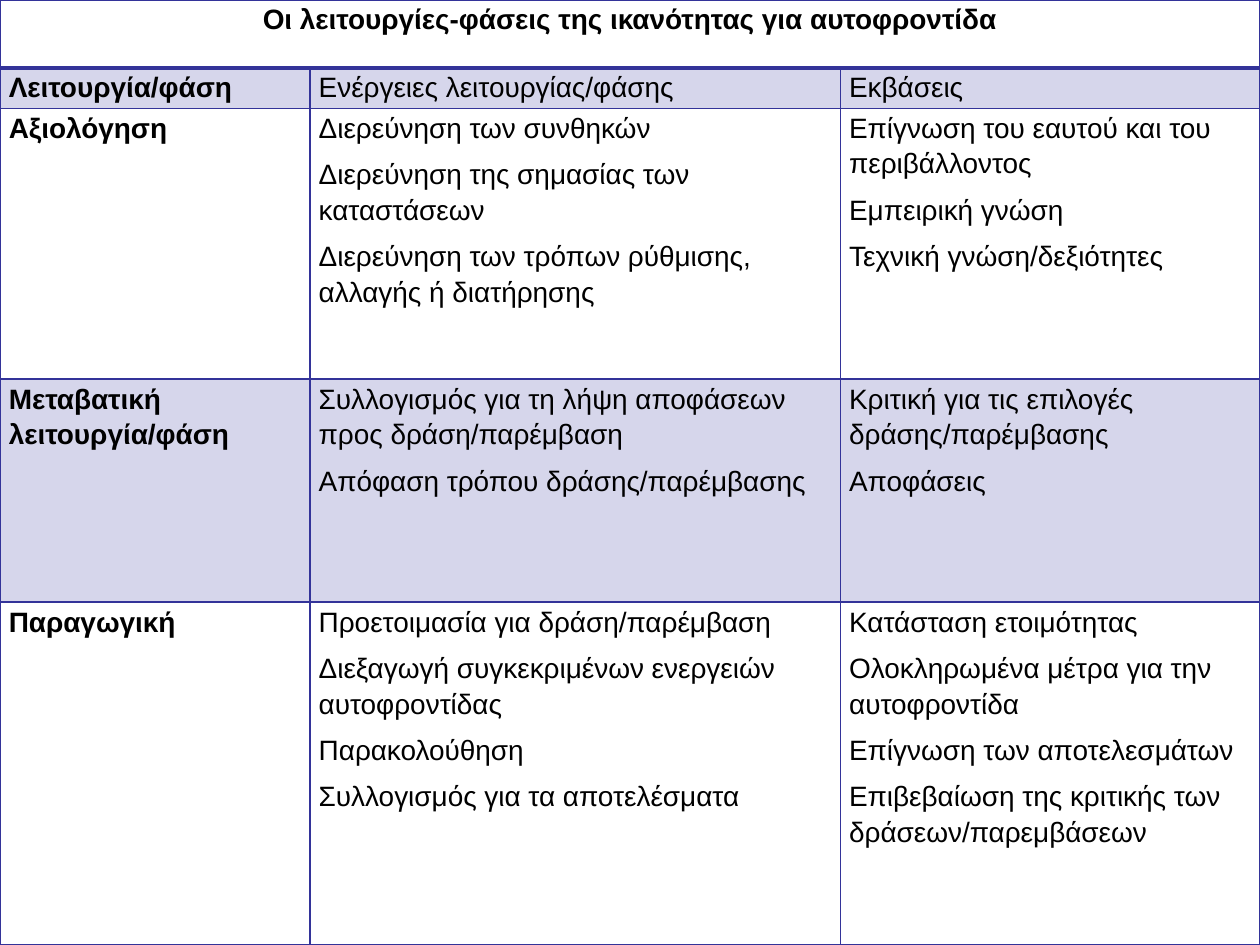
from dataclasses import dataclass

from lxml.etree import SubElement
from pptx import Presentation
from pptx.dml.color import RGBColor
from pptx.enum.text import PP_ALIGN as Align
from pptx.oxml.ns import qn
from pptx.table import _Cell as Cell
from pptx.util import Inches, Pt

BORDER, BAND, INK = "333399", "D6D6EB", "000000"
COL_WIDTHS = [2.46, 4.21, 3.33]
ROW_HEIGHTS = [0.54, 0.32, 2.15, 1.77, 2.72]
TITLE = "Οι λειτουργίες-φάσεις της ικανότητας για αυτοφροντίδα"


@dataclass
class Phase:
    name: str
    actions: list[str]
    outcomes: list[str]
    banded: bool = False


PHASES = [
    Phase("Λειτουργία/φάση", ["Ενέργειες λειτουργίας/φάσης"], ["Εκβάσεις"], True),
    Phase(
        "Αξιολόγηση",
        ["Διερεύνηση των συνθηκών",
         "Διερεύνηση της σημασίας των καταστάσεων",
         "Διερεύνηση των τρόπων ρύθμισης, αλλαγής ή διατήρησης"],
        ["Επίγνωση του εαυτού και του περιβάλλοντος",
         "Εμπειρική γνώση",
         "Τεχνική γνώση/δεξιότητες"],
    ),
    Phase(
        "Μεταβατική λειτουργία/φάση",
        ["Συλλογισμός για τη λήψη αποφάσεων προς δράση/παρέμβαση",
         "Απόφαση τρόπου δράσης/παρέμβασης"],
        ["Κριτική για τις επιλογές δράσης/παρέμβασης",
         "Αποφάσεις"],
        True,
    ),
    Phase(
        "Παραγωγική",
        ["Προετοιμασία για δράση/παρέμβαση",
         "Διεξαγωγή συγκεκριμένων ενεργειών αυτοφροντίδας",
         "Παρακολούθηση",
         "Συλλογισμός για τα αποτελέσματα"],
        ["Κατάσταση ετοιμότητας",
         "Ολοκληρωμένα μέτρα για την αυτοφροντίδα",
         "Επίγνωση των αποτελεσμάτων",
         "Επιβεβαίωση της κριτικής των δράσεων/παρεμβάσεων"],
    ),
]


def rgb(color: str) -> RGBColor:
    return RGBColor.from_string(color)


def style_cell(cell: Cell, banded: bool = False, top: float = 1, bottom: float = 1) -> None:
    """Set borders (widths in points), margins and fill."""
    props = cell._tc.get_or_add_tcPr()
    for side, width in {"L": 1, "R": 1, "T": top, "B": bottom}.items():
        line = SubElement(props, qn(f"a:ln{side}"), w=str(Pt(width)))
        fill = SubElement(line, qn("a:solidFill"))
        SubElement(fill, qn("a:srgbClr"), val=BORDER)
    cell.margin_left = cell.margin_right = Inches(0.07)
    cell.margin_top = cell.margin_bottom = 0
    if banded:
        cell.fill.solid()
        cell.fill.fore_color.rgb = rgb(BAND)
    else:
        cell.fill.background()


def write_cell(cell: Cell, lines: list[str], bold: bool = False,
               align: Align = Align.LEFT, gap: float = 0) -> None:
    tf = cell.text_frame
    for i, line in enumerate(lines):
        p = tf.add_paragraph() if i else tf.paragraphs[0]
        p.text = line
        p.alignment = align
        p.line_spacing = 1.15
        p.space_after = Pt(gap)
        p.font.name = "Arial"
        p.font.size = Pt(16)
        p.font.bold = bold
        p.font.color.rgb = rgb(INK)


def main() -> None:
    prs = Presentation()
    prs.slide_width, prs.slide_height = Inches(10), Inches(7.5)
    s = prs.slides.add_slide(prs.slide_layouts[6])

    # Table grid
    table = s.shapes.add_table(len(ROW_HEIGHTS), len(COL_WIDTHS), 0, 0,
                               prs.slide_width, prs.slide_height).table
    table.first_row = table.horz_banding = False
    for column, width in zip(table.columns, COL_WIDTHS):
        column.width = Inches(width)
    for row, height in zip(table.rows, ROW_HEIGHTS):
        row.height = Inches(height)

    # Title row across all columns
    for cell in table.rows[0].cells:
        style_cell(cell, bottom=2)
    table.cell(0, 0).merge(table.cell(0, len(COL_WIDTHS) - 1))
    write_cell(table.cell(0, 0), [TITLE], bold=True, align=Align.CENTER)

    # Column headings and phases
    for i, phase in enumerate(PHASES, start=1):
        for j, lines in enumerate([[phase.name], phase.actions, phase.outcomes]):
            cell = table.cell(i, j)
            style_cell(cell, phase.banded, top=2 if i == 1 else 1)
            write_cell(cell, lines, bold=j == 0, gap=6 if i > 1 and j else 0)

    prs.save("out.pptx")


if __name__ == "__main__":
    main()
